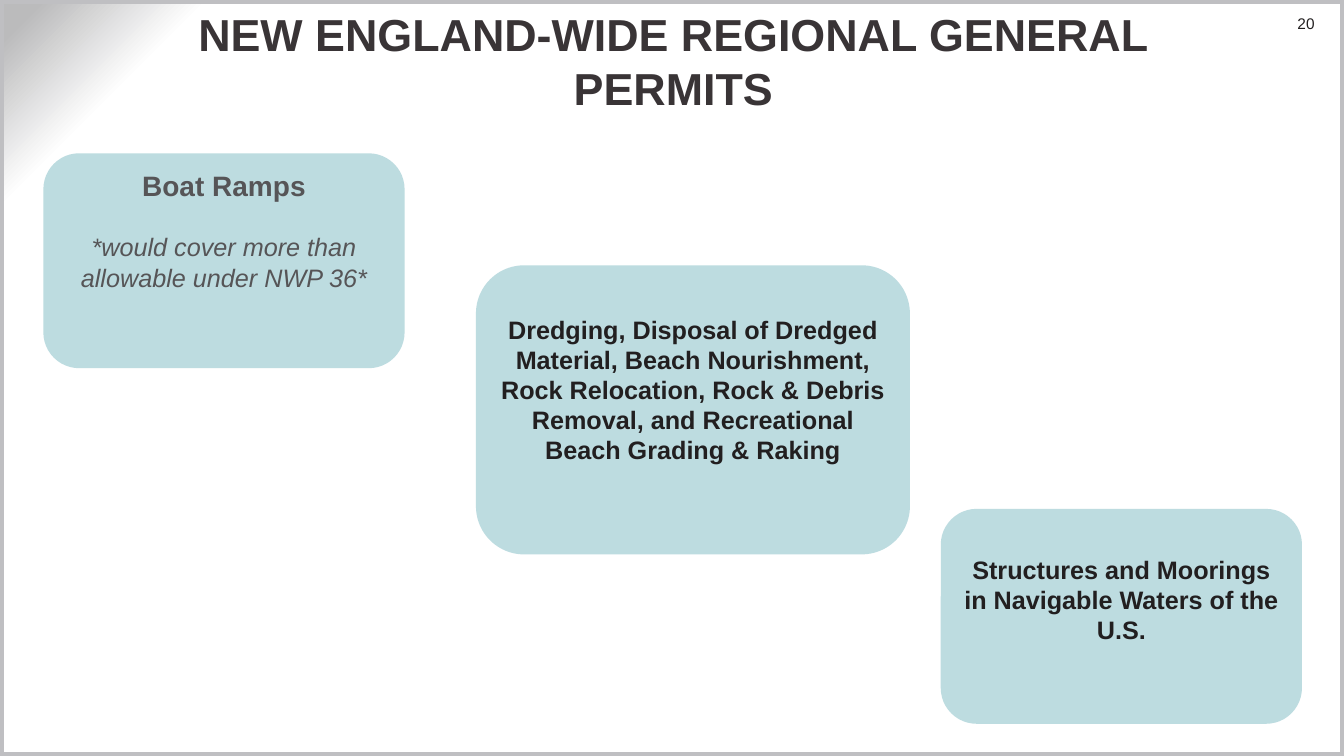
from lxml.etree import SubElement
from pptx import Presentation
from pptx.dml.color import RGBColor
from pptx.enum.shapes import MSO_SHAPE
from pptx.enum.text import MSO_ANCHOR, MSO_AUTO_SIZE, PP_ALIGN
from pptx.oxml import parse_xml
from pptx.oxml.ns import nsdecls, qn
from pptx.util import Pt

WIDTH, HEIGHT = 960, 540
INK, TITLE_INK, NOTE_INK = "221F20", "393436", "565557"
CARD_FILL, FRAME_LINE = "B5D8DD", "BFBFC2"
BACKGROUND_STOPS = [(87, "FFFFFF"), (90, "FFFFFF"), (98, "BBBBBC")]
SMALL_CARD = (258, 153.5)
LARGE_CARD = (310, 206.5)
LINE_GAP = 21


def colour(value):
    return RGBColor.from_string(value)


def points(*lengths):
    return [Pt(length) for length in lengths]


def style(para, text, size, ink, align=PP_ALIGN.CENTER, bold=False, italic=False):
    para.text = text
    para.alignment = align
    for span in para.runs:
        font = span.font
        font.name, font.size = "Arial", Pt(size)
        font.bold, font.italic = bold, italic
        font.color.rgb = colour(ink)


def set_margins(frame, left, top, right, bottom):
    frame.margin_left, frame.margin_top, frame.margin_right, frame.margin_bottom = points(
        left, top, right, bottom)


def paint_background(page):
    """Shade the top left corner with a circular gradient."""
    stops = "".join(
        f'<a:gs pos="{place * 1000}"><a:srgbClr val="{value}"/></a:gs>'
        for place, value in BACKGROUND_STOPS)
    gradient = parse_xml(
        f'<a:gradFill {nsdecls("a")} rotWithShape="1"><a:gsLst>{stops}</a:gsLst>'
        '<a:path path="circle"><a:fillToRect l="100000" t="100000"/></a:path>'
        '</a:gradFill>')
    fill = page.background.fill
    fill.solid()
    properties = page.background._cSld.bg.bgPr
    properties.replace(properties.find(qn("a:solidFill")), gradient)


def add_frame(page, box):
    frame = page.shapes.add_shape(MSO_SHAPE.RECTANGLE, *points(*box))
    frame.shadow.inherit = False
    frame.fill.background()
    frame.line.color.rgb = colour(FRAME_LINE)
    frame.line.width = Pt(6)


def add_page_number(page, box, number):
    frame = page.shapes.add_textbox(*points(*box)).text_frame
    frame.word_wrap = True
    set_margins(frame, 7.2, 0, 0, 0)
    style(frame.paragraphs[0], number, 11, INK, PP_ALIGN.RIGHT)


def set_title(page, box, text):
    title = page.shapes.title
    title.left, title.top, title.width, title.height = points(*box)
    frame = title.text_frame
    frame.auto_size = MSO_AUTO_SIZE.NONE
    frame.word_wrap = True
    frame.vertical_anchor = MSO_ANCHOR.MIDDLE
    set_margins(frame, 3.6, 0, 3.6, 0)
    style(frame.paragraphs[0], text, 32, TITLE_INK, bold=True)


def add_card(page, box, heading, size=18, ink=INK, note=None):
    """Draw a rounded card; a heading without a note starts one line lower."""
    card = page.shapes.add_shape(MSO_SHAPE.ROUNDED_RECTANGLE, *points(*box))
    card.shadow.inherit = False
    card.line.fill.background()
    card.fill.solid()
    card.fill.fore_color.rgb = colour(CARD_FILL)
    tint = card.fill._xPr.find(qn("a:solidFill"))[0]
    SubElement(tint, qn("a:alpha"), val="89000")

    frame = card.text_frame
    frame.word_wrap = True
    frame.vertical_anchor = MSO_ANCHOR.TOP
    set_margins(frame, 7.2, 3.6 if note else 3.6 + LINE_GAP, 7.2, 3.6)
    style(frame.paragraphs[0], heading, size, ink, bold=True)
    if note:
        para = frame.add_paragraph()
        style(para, note, 18, ink, italic=True)
        para.space_before = Pt(LINE_GAP)


def build_permits_page(deck):
    page = deck.slides.add_slide(deck.slide_layouts[5])
    paint_background(page)
    add_page_number(page, (896, 10, 43, 14), "20")
    add_frame(page, (0, 0, WIDTH, HEIGHT))
    set_title(page, (78, 10, 806, 66), "NEW ENGLAND-WIDE REGIONAL GENERAL PERMITS")
    add_card(page, (31, 109.5, *SMALL_CARD), "Boat Ramps", 20, NOTE_INK,
             "*would cover more than allowable under NWP 36*")
    add_card(page, (340, 189.5, *LARGE_CARD),
             "Dredging, Disposal of Dredged Material, Beach Nourishment, Rock Relocation, "
             "Rock & Debris Removal, and Recreational Beach Grading & Raking")
    add_card(page, (672, 363.5, *SMALL_CARD),
             "Structures and Moorings in Navigable Waters of the U.S.")


def main():
    deck = Presentation()
    deck.slide_width, deck.slide_height = points(WIDTH, HEIGHT)
    build_permits_page(deck)
    deck.save("out.pptx")


if __name__ == "__main__":
    main()
